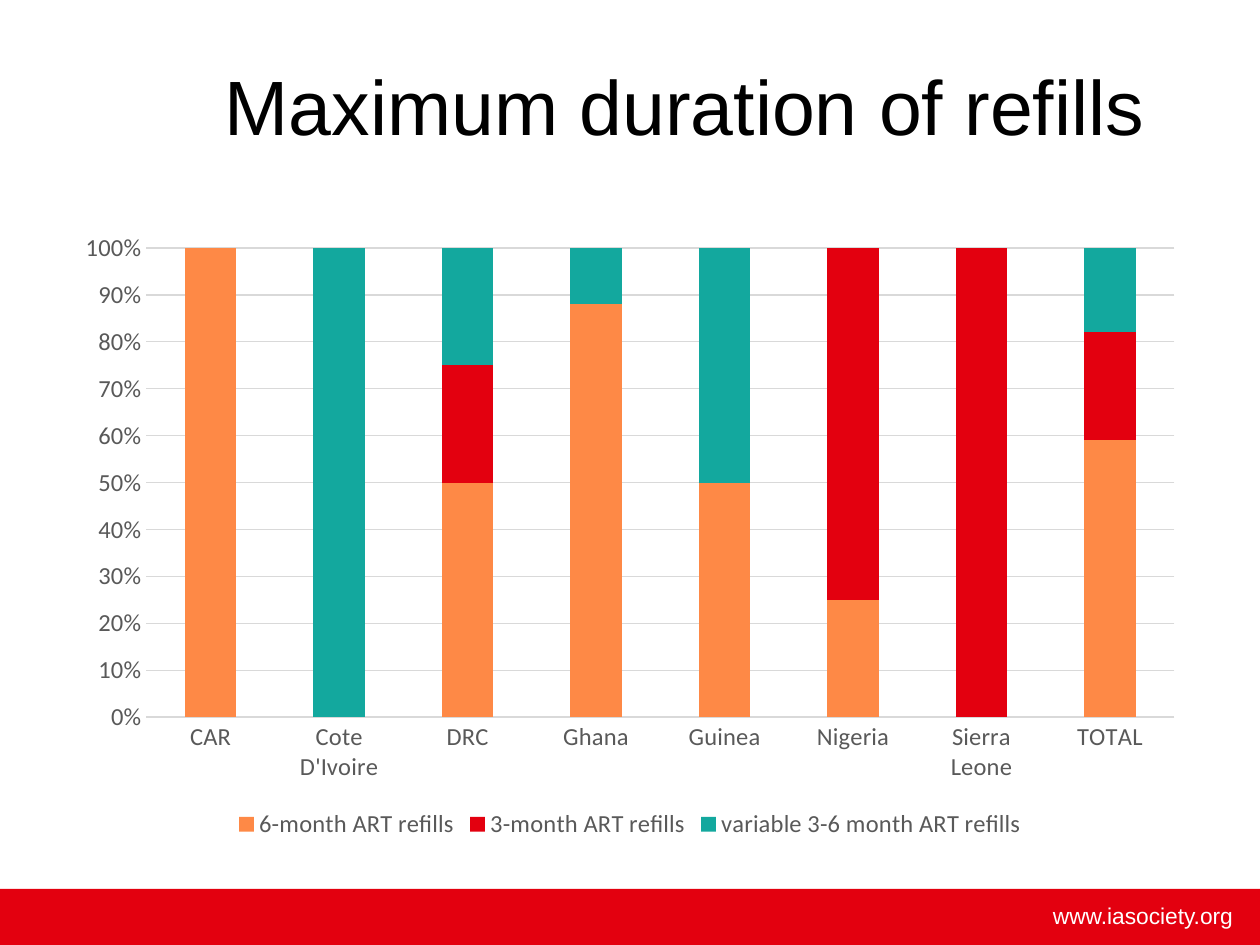
from pptx import Presentation
from pptx.chart.data import CategoryChartData
from pptx.dml.color import RGBColor
from pptx.enum.chart import XL_CHART_TYPE as ChartType
from pptx.enum.chart import XL_LEGEND_POSITION as LegendPos
from pptx.enum.chart import XL_TICK_MARK as Tick
from pptx.enum.shapes import MSO_SHAPE as Shape
from pptx.enum.text import MSO_ANCHOR as Anchor
from pptx.enum.text import PP_ALIGN as Align
from pptx.util import Pt

WIDTH, HEIGHT = 720, 540
BLACK, WHITE, RED = "000000", "FFFFFF", "E3000F"
GRAY, GRID = "595959", "D9D9D9"


def rgb(value):
    return RGBColor.from_string(value)


class Deck:
    text_font = "Arial"
    chart_font = "Calibri"

    def __init__(self):
        self.prs = Presentation()
        self.prs.slide_width, self.prs.slide_height = Pt(WIDTH), Pt(HEIGHT)
        self.s = self.prs.slides.add_slide(self.prs.slide_layouts[5])

    def font(self, font, name, size, color):
        font.name, font.size = name, Pt(size)
        font.color.rgb = rgb(color)

    def fill_text(self, tf, text, size, color, align):
        tf.word_wrap = True
        p = tf.paragraphs[0]
        p.text, p.alignment = text, align
        self.font(p.font, self.text_font, size, color)

    def title(self, text, x, y, w, h):
        sp = self.s.shapes.title
        sp.left, sp.top, sp.width, sp.height = map(Pt, (x, y, w, h))
        sp.text_frame.vertical_anchor = Anchor.MIDDLE
        self.fill_text(sp.text_frame, text, 44, BLACK, Align.CENTER)

    def band(self, x, y, w, h, color):
        sp = self.s.shapes.add_shape(Shape.RECTANGLE, *map(Pt, (x, y, w, h)))
        sp.shadow.inherit = False
        sp.fill.solid()
        sp.fill.fore_color.rgb = rgb(color)
        sp.line.fill.background()

    def text(self, text, x, y, w, h, size, color, align):
        sp = self.s.shapes.add_textbox(*map(Pt, (x, y, w, h)))
        self.fill_text(sp.text_frame, text, size, color, align)

    def line(self, line, color):
        line.color.rgb = rgb(color)
        line.width = Pt(0.75)

    def stacked_chart(self, categories, series, x, y, w, h):
        data = CategoryChartData()
        data.categories = categories
        for name, _, values in series:
            data.add_series(name, values)
        chart = self.s.shapes.add_chart(
            ChartType.COLUMN_STACKED_100, *map(Pt, (x, y, w, h)), data).chart
        self.font(chart.font, self.chart_font, 10, BLACK)
        chart.has_title = False

        plot = chart.plots[0]
        plot.gap_width, plot.overlap = 150, 100
        plot.vary_by_categories = False
        for bars, (_, color, _) in zip(plot.series, series):
            bars.format.fill.solid()
            bars.format.fill.fore_color.rgb = rgb(color)

        for axis in (chart.category_axis, chart.value_axis):
            axis.major_tick_mark = axis.minor_tick_mark = Tick.NONE
            self.font(axis.tick_labels.font, self.chart_font, 14, GRAY)
        self.line(chart.category_axis.format.line, GRID)
        axis = chart.value_axis
        axis.format.line.fill.background()
        axis.tick_labels.number_format = "0%"
        axis.tick_labels.number_format_is_linked = False
        axis.has_major_gridlines = True
        self.line(axis.major_gridlines.format.line, GRID)

        chart.has_legend = True
        chart.legend.position = LegendPos.BOTTOM
        chart.legend.include_in_layout = False
        self.font(chart.legend.font, self.chart_font, 14, GRAY)


def main():
    countries = ["CAR", "Cote D'Ivoire", "DRC", "Ghana", "Guinea",
                 "Nigeria", "Sierra Leone", "TOTAL"]
    refills = [
        ("6-month ART refills", "FE8946",
         [100, None, 50, 88, 50, 25, None, 59]),
        ("3-month ART refills", RED,
         [None, None, 25, None, None, 75, 100, 23]),
        ("variable 3-6 month ART refills", "13A89E",
         [None, 100, 25, 12, 50, None, None, 18]),
    ]
    deck = Deck()
    deck.band(0, 508, WIDTH, 32, RED)
    deck.text("www.iasociety.org", 473, 512, 238.5, 23, 13, WHITE, Align.RIGHT)
    deck.title("Maximum duration of refills", 99, 15, 585, 90)
    deck.stacked_chart(countries, refills, 36, 126, 648, 356.5)
    deck.prs.save("out.pptx")


if __name__ == "__main__":
    main()
